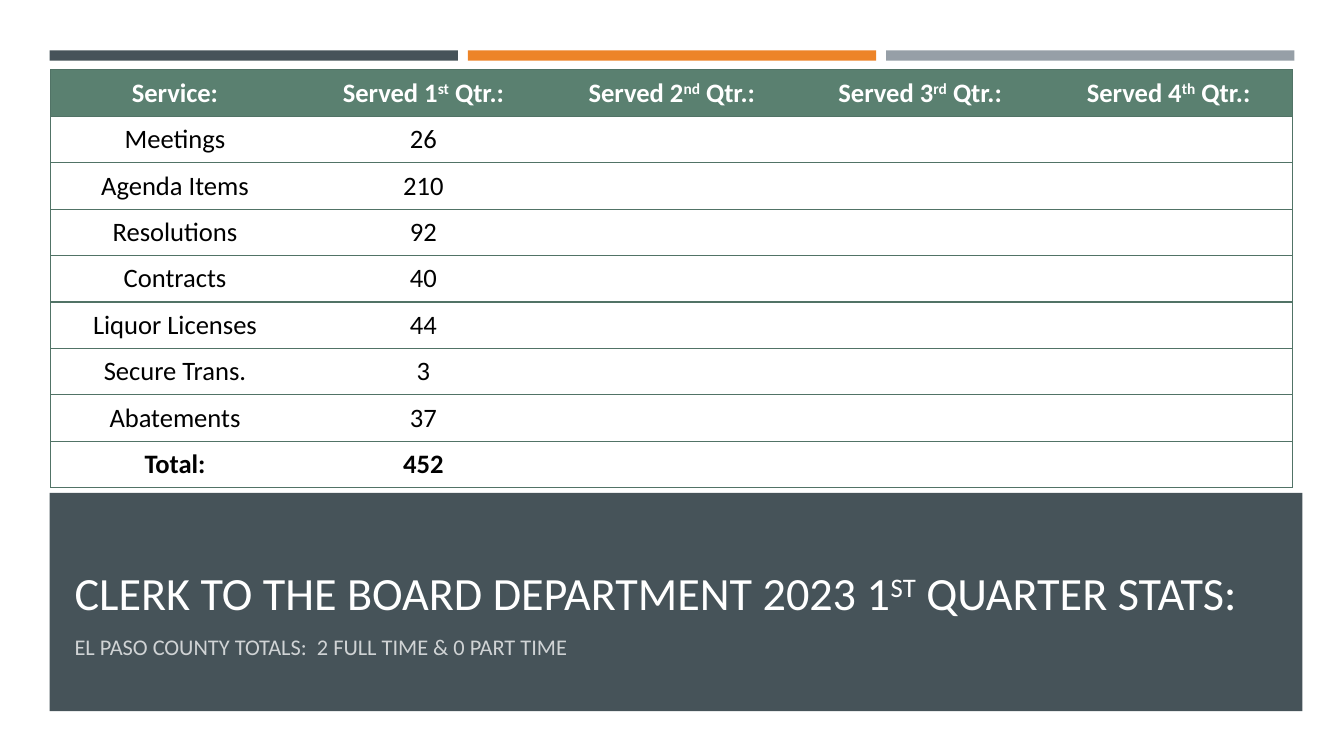
"""Build the quarterly service statistics slide."""
from lxml import etree
from pptx import Presentation
from pptx.dml.color import RGBColor
from pptx.enum.shapes import MSO_SHAPE
from pptx.enum.text import MSO_ANCHOR, PP_ALIGN
from pptx.oxml.ns import qn
from pptx.util import Cm, Pt

RECT = MSO_SHAPE.RECTANGLE
MIDDLE, BOTTOM, TOP = MSO_ANCHOR.MIDDLE, MSO_ANCHOR.BOTTOM, MSO_ANCHOR.TOP
CENTER = PP_ALIGN.CENTER
SLATE = RGBColor(0x46, 0x53, 0x59)
ORANGE = RGBColor(0xED, 0x84, 0x28)
GRAY = RGBColor(0x96, 0x9F, 0xA7)
GREEN = RGBColor(0x5A, 0x80, 0x70)
EDGE = RGBColor(0x51, 0x73, 0x66)
WHITE = RGBColor(0xFF, 0xFF, 0xFF)
BLACK = RGBColor(0, 0, 0)

HEAD = ["Service:", "Served 1^st^ Qtr.:", "Served 2^nd^ Qtr.:",
        "Served 3^rd^ Qtr.:", "Served 4^th^ Qtr.:"]
ROWS = [("Meetings", "26"), ("Agenda Items", "210"), ("Resolutions", "92"),
        ("Contracts", "40"), ("Liquor Licenses", "44"), ("Secure Trans.", "3"),
        ("Abatements", "37"), ("Total:", "452")]
TITLE = "CLERK TO THE BOARD DEPARTMENT 2023 1^ST^ QUARTER STATS:"
NOTE = "EL PASO COUNTY TOTALS:  2 FULL TIME & 0 PART TIME"


def write(frame, text, size, color, bold=False):
    """Fill the first paragraph; text between carets is superscript."""
    para = frame.paragraphs[0]
    font = para.font
    font.name, font.size, font.bold = "Calibri", Pt(size), bold
    font.color.rgb = color
    for i, part in enumerate(text.split("^")):
        run = para.add_run()
        run.text = part
        if i % 2:
            run._r.get_or_add_rPr().set("baseline", "30000")
    return para


def border(cell, side, shown):
    """Draw or clear one side of a cell."""
    line = etree.SubElement(cell._tc.get_or_add_tcPr(), qn("a:ln" + side), w="12700")
    if shown:
        fill = etree.SubElement(line, qn("a:solidFill"))
        etree.SubElement(fill, qn("a:srgbClr"), val=str(EDGE))
    else:
        etree.SubElement(line, qn("a:noFill"))


deck = Presentation()
deck.slide_width, deck.slide_height = Cm(33.87), Cm(19.05)
slide = deck.slides.add_slide(deck.slide_layouts[6])
shapes = slide.shapes

LEFT = 1.25
bars = [(LEFT + i * 10.54, 1.27, 10.29, 0.26, color)
        for i, color in enumerate([SLATE, ORANGE, GRAY])]
for x, y, w, h, color in bars + [(LEFT, 12.42, 31.57, 5.5, SLATE)]:
    box = shapes.add_shape(RECT, Cm(x), Cm(y), Cm(w), Cm(h))
    box.shadow.inherit = False
    box.fill.solid()
    box.fill.fore_color.rgb = color
    box.line.fill.background()

paras = []
for text, y, h, size, anchor in [(TITLE, 12.8, 2.97, 33, BOTTOM),
                                 (NOTE, 15.82, 1.45, 16, TOP)]:
    frame = shapes.add_textbox(Cm(1.63), Cm(y), Cm(30.53), Cm(h)).text_frame
    frame.word_wrap = True
    frame.vertical_anchor = anchor
    paras.append(write(frame, text, size, WHITE))
title, note = paras
title.line_spacing = 0.9
note.space_before, note.space_after = Pt(3.2), Pt(6)
tint = note._p.find(".//" + qn("a:srgbClr"))
etree.SubElement(tint, qn("a:alpha"), val="75000")

count, width = len(ROWS) + 1, len(HEAD)
table = shapes.add_table(count, width, Cm(1.28), Cm(1.76),
                         Cm(6.26 * width), Cm(1.17 * count)).table
table.horz_banding = False
for col in table.columns:
    col.width = Cm(6.26)
for r, row in enumerate([HEAD] + ROWS):
    table.rows[r].height = Cm(1.17)
    for c in range(width):
        cell = table.cell(r, c)
        for side, shown in [("L", c == 0), ("R", c == width - 1),
                            ("T", True), ("B", True)]:
            border(cell, side, shown)
        cell.fill.solid()
        cell.fill.fore_color.rgb = WHITE if r else GREEN
        cell.vertical_anchor = MIDDLE
        if c < len(row):
            para = write(cell.text_frame, row[c], 19, BLACK if r else WHITE,
                         r in (0, count - 1))
            para.alignment = CENTER

deck.save("out.pptx")
